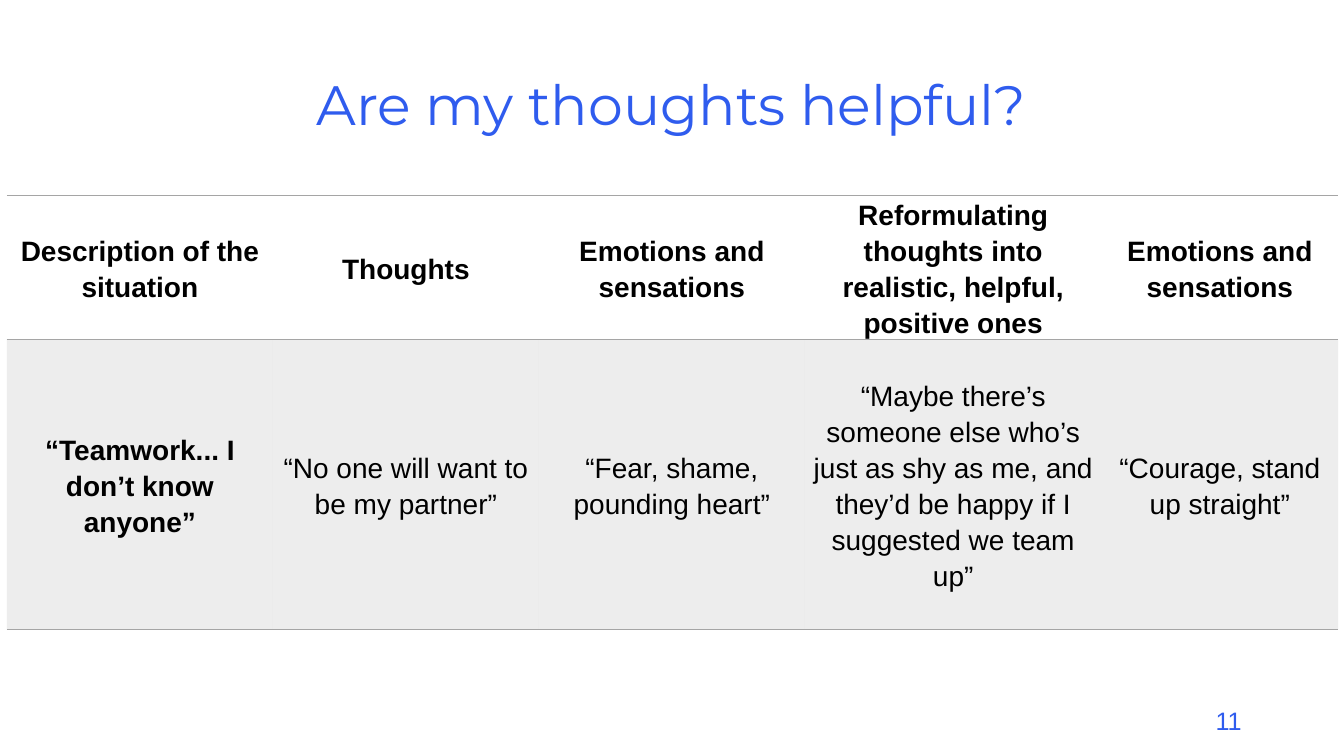
import pptx
import pptx.dml.color
import pptx.enum.text
import pptx.oxml
import pptx.oxml.ns
import pptx.util
from lxml import etree

Pt = pptx.util.Pt
RGBColor = pptx.dml.color.RGBColor
Align = pptx.enum.text.PP_ALIGN
Anchor = pptx.enum.text.MSO_ANCHOR

THEME = {
    "blue": RGBColor(0x2F, 0x5C, 0xEE),
    "black": RGBColor(0, 0, 0),
    "gray": RGBColor(0xA5, 0xA5, 0xA5),
    "heading_font": "Montserrat",
    "body_font": "Arial",
    "title_size": Pt(39.6),
    "cell_size": Pt(20),
    "number_size": Pt(18),
}


def write(text_frame, text, font_format, paragraph_format):
    text_frame.word_wrap = True
    paragraph = text_frame.paragraphs[0]
    paragraph.text = text
    for name, value in paragraph_format.items():
        setattr(paragraph, name, value)
    font = paragraph.runs[0].font
    for name, value in font_format.items():
        if name == "color":
            font.color.rgb = value
        else:
            setattr(font, name, value)


def add_border(cell_properties, position, side, visible):
    line = pptx.oxml.parse_xml(
        f'<a:{side} {pptx.oxml.ns.nsdecls("a")} w="{Pt(1)}"/>')
    if visible:
        fill = etree.SubElement(line, pptx.oxml.ns.qn("a:solidFill"))
        etree.SubElement(fill, pptx.oxml.ns.qn("a:srgbClr"), val=str(THEME["gray"]))
    else:
        etree.SubElement(line, pptx.oxml.ns.qn("a:noFill"))
    cell_properties.insert(position, line)


presentation = pptx.Presentation()
presentation.slide_width, presentation.slide_height = Pt(960), Pt(540)
slide = presentation.slides.add_slide(presentation.slide_layouts[5])

# Title
title = slide.shapes.title
title.left, title.top, title.width, title.height = Pt(101), Pt(45), Pt(757), Pt(64)
title.text_frame.vertical_anchor = Anchor.MIDDLE
write(title.text_frame, "Are my thoughts helpful?",
      {"size": THEME["title_size"], "name": THEME["heading_font"], "color": THEME["blue"]},
      {"alignment": Align.CENTER, "line_spacing": 0.9})

# Thought record table
thought_rows = [
    ["Description of the situation", "Thoughts", "Emotions and sensations",
     "Reformulating thoughts into realistic, helpful, positive ones",
     "Emotions and sensations"],
    ["“Teamwork... I don’t know anyone”", "“No one will want to be my partner”",
     "“Fear, shame, pounding heart”",
     "“Maybe there’s someone else who’s just as shy as me, and they’d be happy "
     "if I suggested we team up”",
     "“Courage, stand up straight”"],
]
column_widths = [190, 190, 190, 212, 169]
row_heights = [103, 207]
table = slide.shapes.add_table(
    len(row_heights), len(column_widths), Pt(5), Pt(139.5),
    Pt(sum(column_widths)), Pt(sum(row_heights))).table
table.horz_banding = False
for column, width in zip(table.columns, column_widths):
    column.width = Pt(width)

for row_index, texts in enumerate(thought_rows):
    table.rows[row_index].height = Pt(row_heights[row_index])
    for column_index, text in enumerate(texts):
        cell = table.cell(row_index, column_index)
        cell_format = {"vertical_anchor": Anchor.MIDDLE,
                       "margin_left": Pt(5), "margin_right": Pt(5),
                       "margin_top": 0, "margin_bottom": 0}
        for name, value in cell_format.items():
            setattr(cell, name, value)
        write(cell.text_frame, text,
              {"size": THEME["cell_size"], "name": THEME["body_font"],
               "color": THEME["black"], "bold": row_index == 0 or column_index == 0},
              {"alignment": Align.CENTER, "line_spacing": 1.15, "space_after": Pt(7)})

        # Example row is tinted, header row is clear
        cell_properties = cell._tc.get_or_add_tcPr()
        if row_index == 0:
            cell.fill.background()
        else:
            cell.fill.solid()
            cell.fill.fore_color.rgb = THEME["gray"]
            color = cell_properties.find(".//" + pptx.oxml.ns.qn("a:srgbClr"))
            etree.SubElement(color, pptx.oxml.ns.qn("a:alpha"), val="20000")

        # Horizontal rules only
        for position, side in enumerate(["lnL", "lnR", "lnT", "lnB"]):
            add_border(cell_properties, position, side, side in ("lnT", "lnB"))

# Slide number
number_box = slide.shapes.add_textbox(Pt(678), Pt(500.5), Pt(216), Pt(29))
write(number_box.text_frame, "11",
      {"size": THEME["number_size"], "name": THEME["body_font"], "color": THEME["blue"]},
      {"alignment": Align.RIGHT})

presentation.save("out.pptx")
